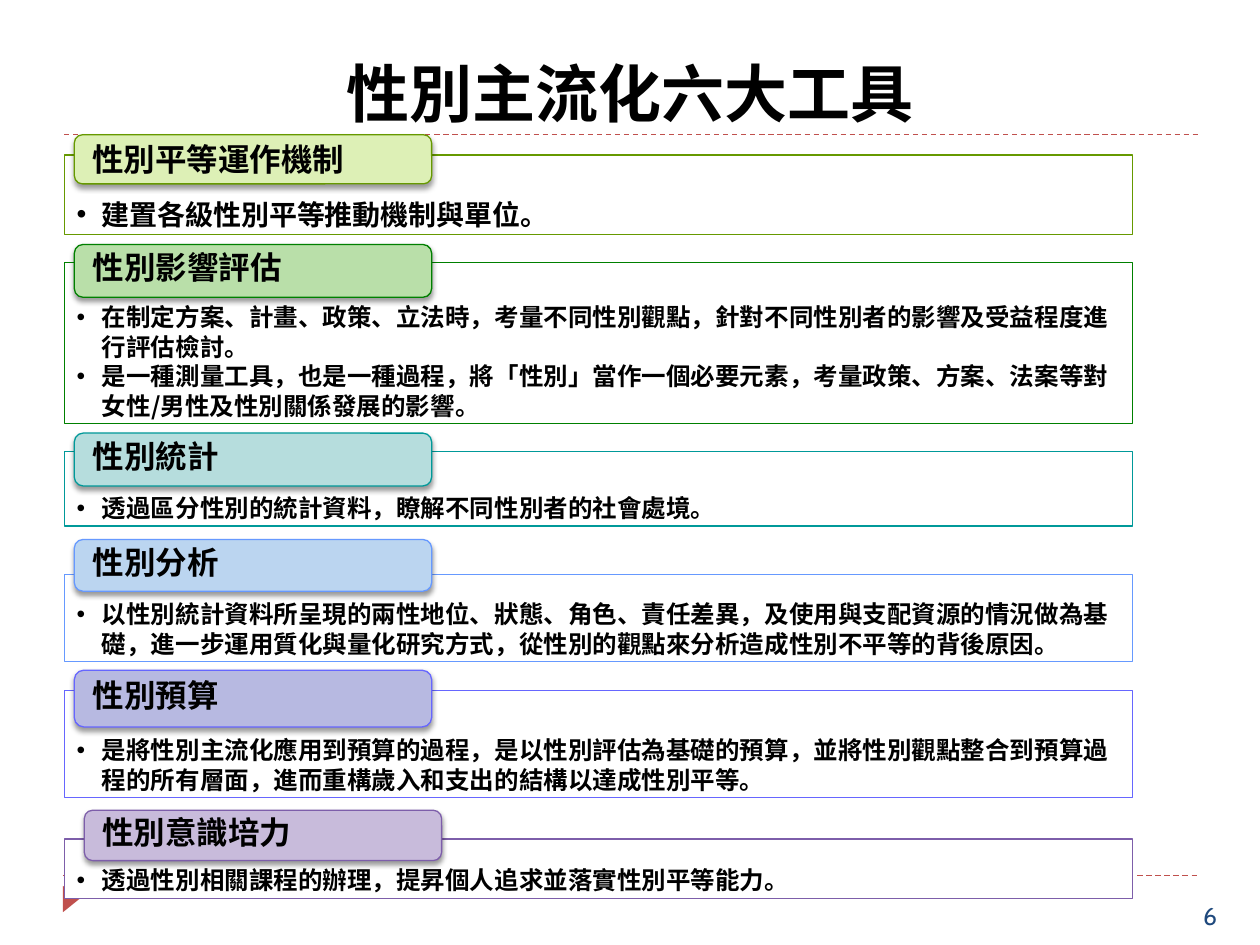
import pptx
import pptx.util
import pptx.dml.color
import pptx.enum.dml
import pptx.enum.shapes
import pptx.enum.text
import pptx.oxml
import pptx.oxml.ns
from lxml import etree
from dataclasses import dataclass

Pt = pptx.util.Pt
SHAPE = pptx.enum.shapes.MSO_SHAPE
ANCHOR = pptx.enum.text.MSO_ANCHOR
ALIGN = pptx.enum.text.PP_ALIGN
qn = pptx.oxml.ns.qn


@dataclass(frozen=True)
class Theme:
    cjk: str = "Noto Sans CJK SC"
    latin: str = "Cabin"
    black: str = "000000"
    white: str = "FFFFFF"
    accent: str = "C0504D"
    number: str = "1F497D"
    title_size: int = 36
    label_size: int = 18
    lead_size: int = 16
    body_size: int = 14


T = Theme()
BODY_X, BODY_W = 36.7, 610.6
TAB_W = 204.2

# label, line, tab fill, (body top, height), (tab left, top, height), size, spacing, points
TOOLS = [
    ("性別平等運作機制", "669900", "DDF0B6", (88.6, 45.4), (42.5, 77, 28.1), T.lead_size, 1,
     ["建置各級性別平等推動機制與單位。"]),
    ("性別影響評估", "008000", "B9DFA9", (149.8, 92.2), (42.5, 139.7, 30.2), T.body_size, 0.8,
     ["在制定方案、計畫、政策、立法時，考量不同性別觀點，針對不同性別者的影響及受益程度進行評估檢討。",
      "是一種測量工具，也是一種過程，將「性別」當作一個必要元素，考量政策、方案、法案等對女性/男性及性別關係發展的影響。"]),
    ("性別統計", "009999", "B6DDDD", (258.1, 42.5), (42.5, 247.5, 30.2), T.body_size, 0.8,
     ["透過區分性別的統計資料，瞭解不同性別者的社會處境。"]),
    ("性別分析", "6699FF", "BBD5F0", (328.3, 49.7), (42.5, 308.3, 29.5), T.body_size, 0.8,
     ["以性別統計資料所呈現的兩性地位、狀態、角色、責任差異，及使用與支配資源的情況做為基礎，"
      "進一步運用質化與量化研究方式，從性別的觀點來分析造成性別不平等的背後原因。"]),
    ("性別預算", "6666FF", "B7B9E1", (394.6, 61.2), (42.5, 383, 32.4), T.body_size, 0.8,
     ["是將性別主流化應用到預算的過程，是以性別評估為基礎的預算，並將性別觀點整合到預算過程的所有層面，"
      "進而重構歲入和支出的結構以達成性別平等。"]),
    ("性別意識培力", "7D5EAA", "C8BBDB", (479.5, 33.8), (48.2, 463, 28.8), T.body_size, 0.8,
     ["透過性別相關課程的辦理，提昇個人追求並落實性別平等能力。"]),
]


def rgb(value):
    return pptx.dml.color.RGBColor.from_string(value)


def add_box(s, kind, x, y, w, h, fill, line=None):
    sp = s.shapes.add_shape(kind, Pt(x), Pt(y), Pt(w), Pt(h))
    sp.shadow.inherit = False
    sp.fill.solid()
    sp.fill.fore_color.rgb = rgb(fill)
    if line:
        sp.line.color.rgb = rgb(line)
        sp.line.width = Pt(0.75)
    else:
        sp.line.fill.background()
    return sp


def add_shadow(sp):
    effects = sp._element.spPr.find(qn("a:effectLst"))
    shadow = etree.SubElement(effects, qn("a:outerShdw"), blurRad=str(Pt(3)), dist=str(Pt(2)),
                              dir="5400000", rotWithShape="0")
    color = etree.SubElement(shadow, qn("a:srgbClr"), val=T.black)
    etree.SubElement(color, qn("a:alpha"), val="40000")


def write(sp, lines, size, font=T.cjk, color=T.black, bold=True, align=ALIGN.LEFT,
          anchor=ANCHOR.MIDDLE, spacing=1, insets=(7.2, 0, 7.2, 0), bullet=False):
    tf = sp.text_frame
    tf.word_wrap = True
    tf.vertical_anchor = anchor
    tf.margin_left, tf.margin_top, tf.margin_right, tf.margin_bottom = map(Pt, insets)
    for i, text in enumerate(lines):
        p = tf.add_paragraph() if i else tf.paragraphs[0]
        p.alignment = align
        p.line_spacing = spacing
        if bullet:
            pPr = p._p.get_or_add_pPr()
            pPr.set("marL", str(Pt(14.4)))
            pPr.set("indent", str(-Pt(14.4)))
            etree.SubElement(pPr, qn("a:buFont"), typeface="Arial")
            etree.SubElement(pPr, qn("a:buChar"), char="•")
        r = p.add_run()
        r.text = text
        r.font.size, r.font.bold, r.font.name = Pt(size), bold, font
        r.font.color.rgb = rgb(color)
        etree.SubElement(r._r.get_or_add_rPr(), qn("a:ea"), typeface=font)


def add_rule(s, x, y, w):
    c = s.shapes.add_connector(pptx.enum.shapes.MSO_CONNECTOR.STRAIGHT, Pt(x), Pt(y), Pt(x + w), Pt(y))
    c.line.color.rgb = rgb(T.accent)
    c.line.width = Pt(0.75)
    c.line.dash_style = pptx.enum.dml.MSO_LINE.DASH
    etree.SubElement(c._element.spPr, qn("a:effectLst"))


def add_frame(s):
    """Dashed rules and corner marker."""
    add_rule(s, 36.7, 77, 648)
    add_rule(s, 36, 500.4, 648)
    marker = add_box(s, SHAPE.ISOSCELES_TRIANGLE, 33.1, 509, 15.1, 9.4, T.accent)
    marker.rotation = 90


def add_title(s, x, y, w, h, text):
    sp = s.shapes.add_textbox(Pt(x), Pt(y), Pt(w), Pt(h))
    write(sp, [text], T.title_size, align=ALIGN.CENTER, spacing=1.8)


def add_tool(s, x, w, label, line, fill, body, tab, size, spacing, points):
    """Outlined body with a coloured label tab over its top edge."""
    top, height = body
    sp = add_box(s, SHAPE.RECTANGLE, x, top, w, height, T.white, line)
    write(sp, points, size, anchor=ANCHOR.BOTTOM, spacing=Pt(size * 1.2),
          insets=(7.2, 0, 7.2, 2), bullet=True)
    tab_x, tab_y, tab_h = tab
    sp = add_box(s, SHAPE.ROUNDED_RECTANGLE, tab_x, tab_y, TAB_W, tab_h, fill, line)
    add_shadow(sp)
    write(sp, [label], T.label_size, spacing=spacing, insets=(9, 0, 9, 0))


def add_number(s, x, y, w, h, text):
    sp = s.shapes.add_textbox(Pt(x), Pt(y), Pt(w), Pt(h))
    write(sp, [text], T.body_size, font=T.latin, color=T.number, bold=False,
          anchor=ANCHOR.TOP, insets=(7.2, 3.6, 7.2, 3.6))


def main():
    prs = pptx.Presentation()
    prs.slide_width, prs.slide_height = Pt(720), Pt(540)
    s = prs.slides.add_slide(prs.slide_layouts[6])
    add_frame(s)
    add_title(s, 0, 0, 720, 71.3, "性別主流化六大工具")
    for tool in TOOLS:
        add_tool(s, BODY_X, BODY_W, *tool)
    add_number(s, 680.4, 511.2, 39.6, 28.8, "6")
    prs.save("out.pptx")


if __name__ == "__main__":
    main()
